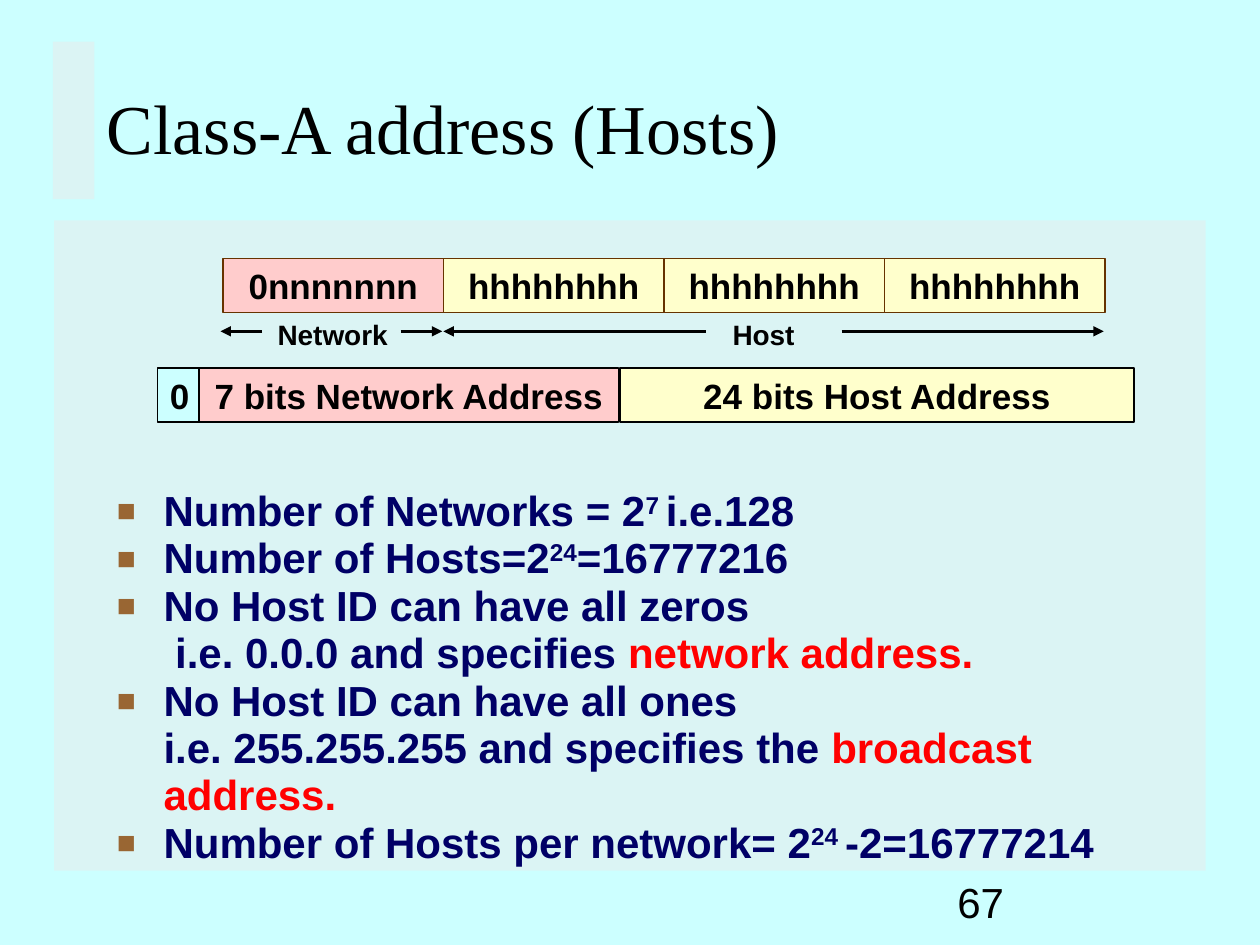
from dataclasses import dataclass

from lxml import etree
from pptx import Presentation
from pptx.dml.color import RGBColor
from pptx.enum.shapes import MSO_CONNECTOR as Connector, MSO_SHAPE as Shape
from pptx.enum.text import MSO_ANCHOR as Anchor, PP_ALIGN as Align
from pptx.oxml.ns import qn
from pptx.util import Inches, Pt


@dataclass(frozen=True)
class Theme:
    background: str = "CCFFFF"
    panel: str = "EAEAEA"
    ink: str = "000000"
    navy: str = "000066"
    alert: str = "FF0000"
    bullet: str = "996633"
    octet_line: str = "663300"
    network: str = "FFCCCC"
    host: str = "FFFFCC"
    sans: str = "Arial"
    serif: str = "Times New Roman"
    title_size: int = 40
    body_size: int = 24
    cell_size: int = 20
    label_size: int = 16


class AddressSlide:
    """Draws the elements of an address-class slide in one theme."""

    def __init__(self, slide, theme):
        self.shapes = slide.shapes
        self.theme = theme
        slide.background.fill.solid()
        slide.background.fill.fore_color.rgb = RGBColor.from_string(theme.background)

    def style(self, run, size, color=None, bold=False, font=None):
        run.font.name = font or self.theme.sans
        run.font.size = Pt(size)
        run.font.bold = bold
        run.font.color.rgb = RGBColor.from_string(color or self.theme.ink)

    def rectangle(self, box, fill):
        shape = self.shapes.add_shape(Shape.RECTANGLE, *map(Inches, box))
        shape.shadow.inherit = False
        shape.fill.solid()
        shape.fill.fore_color.rgb = RGBColor.from_string(fill)
        shape.line.fill.background()
        return shape

    def panel(self, box):
        shape = self.rectangle(box, self.theme.panel)
        color = shape.fill._xPr.find(".//" + qn("a:srgbClr"))
        etree.SubElement(color, qn("a:alpha"), val="50000")

    def cell(self, box, text, fill, line, align=Align.CENTER):
        shape = self.rectangle(box, fill)
        shape.line.color.rgb = RGBColor.from_string(line)
        shape.line.width = Pt(0.75)
        shape.text_frame.vertical_anchor = Anchor.TOP
        shape.text_frame.text = text
        paragraph = shape.text_frame.paragraphs[0]
        paragraph.alignment = align
        self.style(paragraph.runs[0], self.theme.cell_size, bold=True)

    def text(self, box, text, size, bold=False, font=None, wrap=True,
             anchor=Anchor.MIDDLE, align=Align.LEFT):
        frame = self.shapes.add_textbox(*map(Inches, box)).text_frame
        frame.word_wrap = wrap
        frame.vertical_anchor = anchor
        frame.text = text
        paragraph = frame.paragraphs[0]
        paragraph.alignment = align
        self.style(paragraph.runs[0], size, bold=bold, font=font)

    def label(self, left, text):
        self.text((left, 2.47, 1.08, 0.37), text, self.theme.label_size, bold=True,
                  wrap=False, anchor=Anchor.TOP, align=Align.CENTER)

    def arrow(self, start, tip, y):
        line = self.shapes.add_connector(
            Connector.STRAIGHT, Inches(start), Inches(y), Inches(tip), Inches(y))
        line.line.color.rgb = RGBColor.from_string(self.theme.ink)
        line.line.width = Pt(1.5)
        etree.SubElement(line.line._get_or_add_ln(), qn("a:tailEnd"), type="triangle")
        etree.SubElement(line._element.spPr, qn("a:effectLst"))

    def bullet(self, paragraph):
        properties = paragraph._p.get_or_add_pPr()
        properties.set("marL", str(Inches(0.37)))
        properties.set("indent", str(-Inches(0.37)))
        color = etree.SubElement(properties, qn("a:buClr"))
        etree.SubElement(color, qn("a:srgbClr"), val=self.theme.bullet)
        etree.SubElement(properties, qn("a:buSzPct"), val="75000")
        etree.SubElement(properties, qn("a:buFont"), typeface=self.theme.sans)
        etree.SubElement(properties, qn("a:buChar"), char="■")

    def bullets(self, box, items):
        frame = self.shapes.add_textbox(*map(Inches, box)).text_frame
        frame.word_wrap = True
        for index, parts in enumerate(items):
            paragraph = frame.add_paragraph() if index else frame.paragraphs[0]
            self.bullet(paragraph)
            paragraph.line_spacing = 0.94
            for text, kind in parts:
                self.phrase(paragraph, text, kind)

    def phrase(self, paragraph, text, kind):
        color = self.theme.alert if kind == "alert" else self.theme.navy
        for index, line in enumerate(text.split("\n")):
            if index:
                paragraph.add_line_break()
            run = paragraph.add_run()
            run.text = line
            self.style(run, self.theme.body_size, color, bold=True)
            if kind == "power":
                run._r.get_or_add_rPr().set("baseline", "30000")


def main():
    theme = Theme()
    presentation = Presentation()
    presentation.slide_width, presentation.slide_height = Inches(10), Inches(7.5)
    slide = AddressSlide(presentation.slides.add_slide(presentation.slide_layouts[6]), theme)

    slide.panel((0.43, 1.75, 9.14, 5.16))
    slide.panel((0.42, 0.33, 0.33, 1.25))
    slide.text((7.5, 6.91, 2.08, 0.5), "67", theme.body_size)
    slide.text((0.75, 0.42, 8.5, 1.17), "Class-A address (Hosts)",
               theme.title_size, font=theme.serif)

    slide.bullets((0.83, 3.83, 8.67, 2.67), [
        [("Number of Networks = 2", ""), ("7 ", "power"), ("i.e.128", "")],
        [("Number of Hosts=2", ""), ("24", "power"), ("=16777216", "")],
        [("No Host ID can have all zeros\n i.e. 0.0.0 and specifies ", ""),
         ("network address.", "alert")],
        [("No Host ID can have all ones\ni.e. 255.255.255 and specifies the ", ""),
         ("broadcast address.", "alert")],
        [("Number of Hosts per network= 2", ""), ("24 ", "power"), ("-2=16777214", "")],
    ])

    octet_width = 1.75
    for index, octet in enumerate(["0nnnnnnn"] + ["hhhhhhhh"] * 3):
        fill = theme.host if index else theme.network
        slide.cell((1.77 + index * octet_width, 2.05, octet_width, 0.43),
                   octet, fill, theme.octet_line)

    slide.label(2.1, "Network")
    slide.label(5.52, "Host")
    for start, tip in [(2.08, 1.75), (3.18, 3.51), (5.6, 3.52), (6.68, 8.76)]:
        slide.arrow(start, tip, 2.63)

    for left, width, text, fill, align in [
        (1.25, 0.33, "0", theme.background, Align.LEFT),
        (1.58, 3.33, "7 bits Network Address", theme.network, Align.CENTER),
        (4.92, 4.08, "24 bits Host Address", theme.host, Align.CENTER),
    ]:
        slide.cell((left, 2.92, width, 0.43), text, fill, theme.ink, align)

    presentation.save("out.pptx")


if __name__ == "__main__":
    main()
